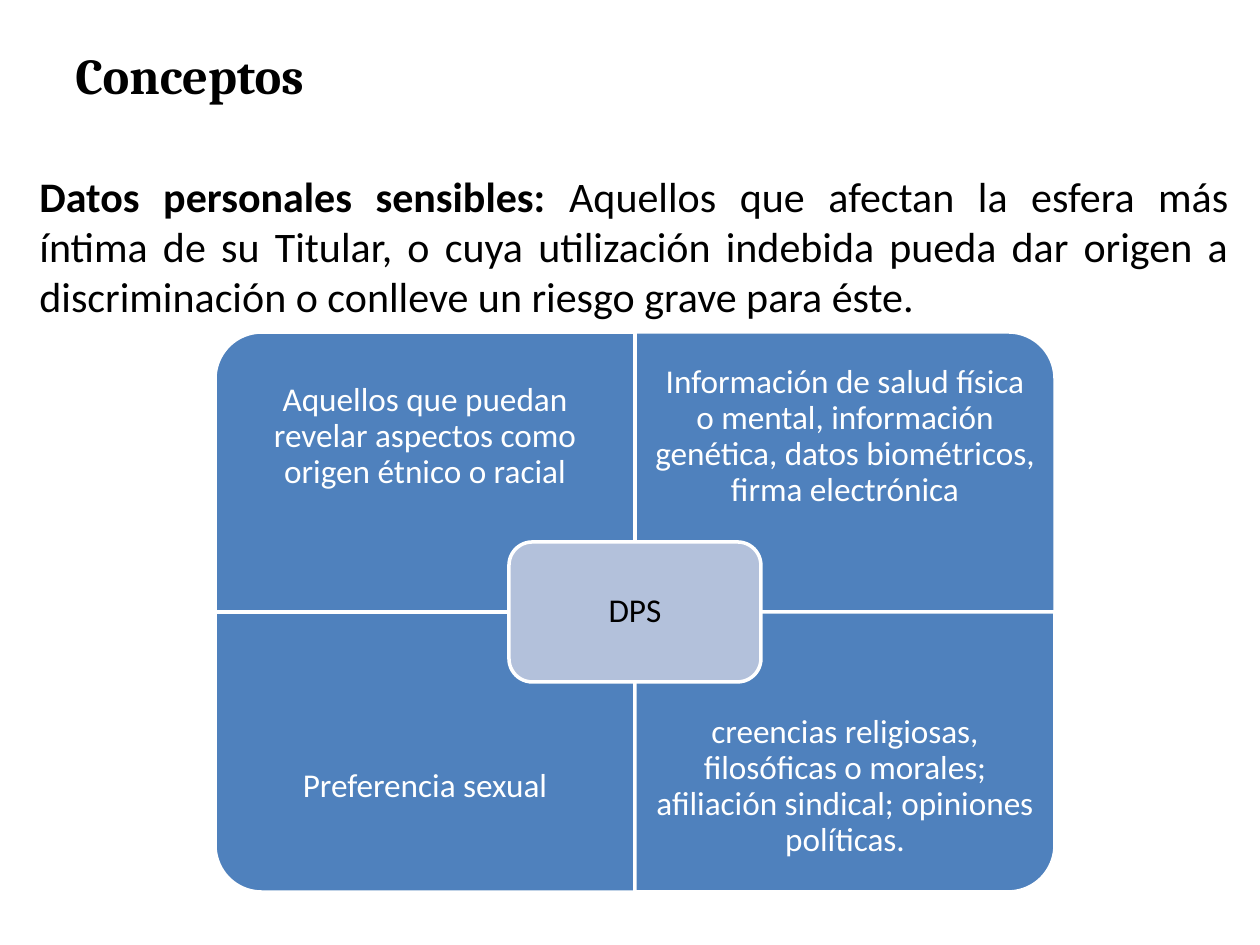
from dataclasses import dataclass

from pptx import Presentation
from pptx.dml.color import RGBColor
from pptx.enum.shapes import MSO_SHAPE
from pptx.enum.text import MSO_ANCHOR, PP_ALIGN
from pptx.shapes.autoshape import Shape
from pptx.slide import Slide
from pptx.util import Emu, Pt

EMU_PER_PX = 914400 / 126


def px(length: float) -> Emu:
    return Emu(round(length * EMU_PER_PX))


@dataclass(frozen=True)
class Theme:
    heading_font: str = "Cambria"
    body_font: str = "Calibri"
    title_size: float = 28.8
    body_size: float = 24
    label_size: float = 19
    line_width: float = 2
    black: RGBColor = RGBColor(0x00, 0x00, 0x00)
    white: RGBColor = RGBColor(0xFF, 0xFF, 0xFF)
    quadrant: RGBColor = RGBColor(0x4F, 0x81, 0xBD)
    core: RGBColor = RGBColor(0xB3, 0xC1, 0xDB)


@dataclass(frozen=True)
class Box:
    left: int
    top: int
    width: int
    height: int

    def emu(self) -> tuple[Emu, Emu, Emu, Emu]:
        return px(self.left), px(self.top), px(self.width), px(self.height)


@dataclass(frozen=True)
class Quadrant:
    column: int
    row: int
    rotation: int
    text: str


THEME = Theme()
TITLE_BOX = Box(63, 38, 1134, 73)
DEFINITION_BOX = Box(27, 164, 1214, 203)
CENTER_X, CENTER_Y = 635, 612
QUADRANT_WIDTH, QUADRANT_HEIGHT = 420, 280
LABEL_HEIGHT = QUADRANT_HEIGHT * 3 // 4
CORE_WIDTH, CORE_HEIGHT = 252, 140
QUADRANT_INSET, CORE_INSET = 19, 17

QUADRANTS = [
    Quadrant(0, 0, 270, "Aquellos que puedan revelar aspectos como origen étnico o racial"),
    Quadrant(1, 0, 0, "Información de salud física o mental, información genética, "
                      "datos biométricos, firma electrónica"),
    Quadrant(0, 1, 180, "Preferencia sexual"),
    Quadrant(1, 1, 90, "creencias religiosas, filosóficas o morales; "
                       "afiliación sindical; opiniones políticas."),
]


def add_panel(slide: Slide, kind: MSO_SHAPE, box: Box, fill: RGBColor) -> Shape:
    shape = slide.shapes.add_shape(kind, *box.emu())
    shape.shadow.inherit = False
    shape.fill.solid()
    shape.fill.fore_color.rgb = fill
    shape.line.color.rgb = THEME.white
    shape.line.width = Pt(THEME.line_width)
    return shape


def write_label(shape: Shape, text: str, color: RGBColor, inset: int) -> None:
    frame = shape.text_frame
    frame.word_wrap = True
    frame.vertical_anchor = MSO_ANCHOR.MIDDLE
    frame.margin_left = frame.margin_right = px(inset)
    frame.margin_top = frame.margin_bottom = px(inset)
    paragraph = frame.paragraphs[0]
    paragraph.text = text
    paragraph.alignment = PP_ALIGN.CENTER
    paragraph.line_spacing = 0.9
    paragraph.font.name = THEME.body_font
    paragraph.font.size = Pt(THEME.label_size)
    paragraph.font.color.rgb = color


def add_quadrant(slide: Slide, quadrant: Quadrant) -> None:
    """Draw a panel turned so that its round corner points outwards, and its upright label."""
    left = CENTER_X + (quadrant.column - 1) * QUADRANT_WIDTH
    top = CENTER_Y + (quadrant.row - 1) * QUADRANT_HEIGHT
    width, height = QUADRANT_WIDTH, QUADRANT_HEIGHT
    if quadrant.rotation % 180:
        width, height = height, width
    box = Box(left + (QUADRANT_WIDTH - width) // 2,
              top + (QUADRANT_HEIGHT - height) // 2, width, height)
    panel = add_panel(slide, MSO_SHAPE.ROUND_1_RECTANGLE, box, THEME.quadrant)
    panel.rotation = quadrant.rotation

    label_top = top + quadrant.row * (QUADRANT_HEIGHT - LABEL_HEIGHT)
    label_box = Box(left, label_top, QUADRANT_WIDTH, LABEL_HEIGHT)
    label = slide.shapes.add_textbox(*label_box.emu())
    write_label(label, quadrant.text, THEME.white, QUADRANT_INSET)


def add_core(slide: Slide) -> None:
    box = Box(CENTER_X - CORE_WIDTH // 2, CENTER_Y - CORE_HEIGHT // 2, CORE_WIDTH, CORE_HEIGHT)
    core = add_panel(slide, MSO_SHAPE.ROUNDED_RECTANGLE, box, THEME.core)
    write_label(core, "DPS", THEME.black, CORE_INSET)


def add_title(slide: Slide) -> None:
    frame = slide.shapes.add_textbox(*TITLE_BOX.emu()).text_frame
    frame.word_wrap = True
    frame.vertical_anchor = MSO_ANCHOR.MIDDLE
    paragraph = frame.paragraphs[0]
    paragraph.text = "Conceptos"
    paragraph.font.name = THEME.heading_font
    paragraph.font.size = Pt(THEME.title_size)
    paragraph.font.bold = True
    paragraph.font.color.rgb = THEME.black


def add_definition(slide: Slide) -> None:
    frame = slide.shapes.add_textbox(*DEFINITION_BOX.emu()).text_frame
    frame.word_wrap = True
    paragraph = frame.paragraphs[0]
    paragraph.alignment = PP_ALIGN.JUSTIFY
    paragraph.font.name = THEME.body_font
    paragraph.font.size = Pt(THEME.body_size)
    paragraph.font.color.rgb = THEME.black
    term = paragraph.add_run()
    term.text = "Datos personales sensibles: "
    term.font.bold = True
    paragraph.add_run().text = (
        "Aquellos que afectan la esfera más íntima de su Titular, o cuya utilización indebida "
        "pueda dar origen a discriminación o conlleve un riesgo grave para éste."
    )


def main() -> None:
    presentation = Presentation()
    presentation.slide_width, presentation.slide_height = px(1260), px(945)
    slide = presentation.slides.add_slide(presentation.slide_layouts[6])
    add_title(slide)
    add_definition(slide)
    for quadrant in QUADRANTS:
        add_quadrant(slide, quadrant)
    add_core(slide)
    presentation.save("out.pptx")


if __name__ == "__main__":
    main()
